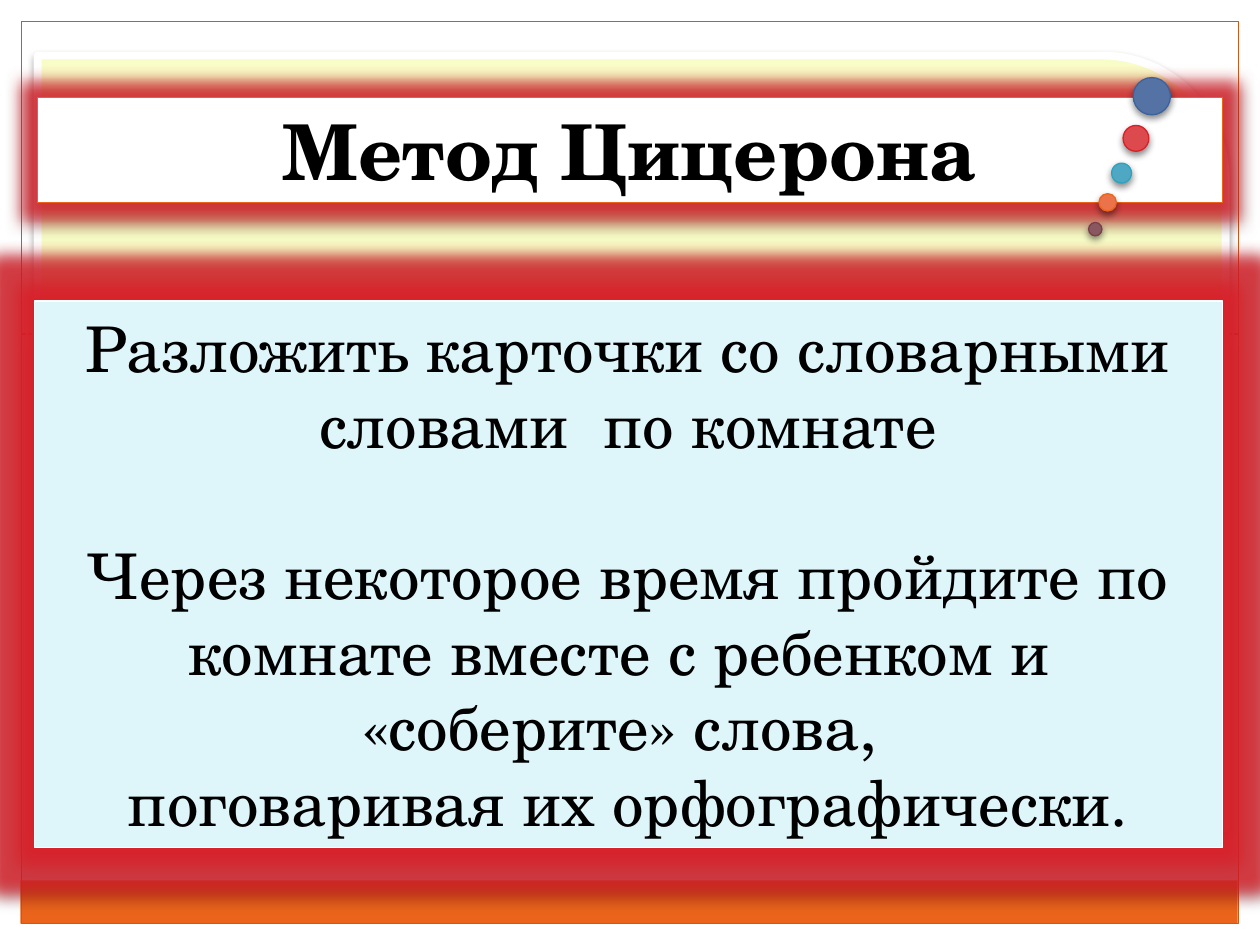
from pptx import Presentation
from pptx.dml.color import RGBColor
from pptx.enum.dml import MSO_LINE
from pptx.enum.shapes import MSO_CONNECTOR, MSO_SHAPE as Kind
from pptx.enum.text import MSO_ANCHOR, MSO_AUTO_SIZE, PP_ALIGN
from pptx.util import Cm, Pt
from lxml.etree import SubElement
from pptx.oxml.ns import qn

THEME = dict(font="TeX Gyre Schola", title=44, body=36, ink="000000",
             white="FFFFFF", sky="DEF5FA", lemon="F8FCC6", orange="EB641B",
             rust="CF5818", glow="DA1F28")

TITLE = "Метод Цицерона"
# text, space before in points
BODY = [
    ("Разложить карточки со словарными словами  по комнате", 0),
    ("Через некоторое время пройдите по комнате вместе с ребенком и ", 43),
    ("«соберите» слова, ", 0),
    ("поговаривая их орфографически.", 0),
]
# boxes are left, top, width, height in cm
EDGES = [
    ((0, 18.62, 25.4, 0.43), "white"),
    ((24.97, 0, 0.43, 19.05), "white"),
    ((0, 0, 0.43, 19.05), "white"),
    ((0, 0, 25.4, 6.98), "white"),
    ((0.41, 17.75, 24.54, 0.87), "orange"),
]
FRAME = (0.43, 0.43, 24.54, 18.19)
CARD = (0.76, 1.12, 23.95, 15.57)
TITLE_BOX = (0.76, 1.96, 23.88, 2.13)
BODY_BOX = (0.69, 6.07, 23.95, 11.02)
# centre x, centre y, diameter, fill, line
DOTS = [
    (23.22, 1.94, 0.75, "5572A4", "39639D"),
    (22.9, 2.79, 0.52, "DC4A4D", "DA1F28"),
    (22.61, 3.49, 0.4, "4FA8C3", "2DA2BF"),
    (22.33, 4.08, 0.35, "EC7349", "EB641B"),
    (22.08, 4.62, 0.27, "885760", "7D3C4A"),
]


def rgb(name):
    return RGBColor.from_string(THEME.get(name, name))


def place(shape, box):
    shape.left, shape.top, shape.width, shape.height = map(Cm, box)


def tint(node, color, alpha):
    clr = SubElement(node, qn("a:srgbClr"), val=str(rgb(color)))
    SubElement(clr, qn("a:alpha"), val=str(alpha * 1000))


def style(shape, fill=None, line=None, width=0.75, shade=None, glow=False):
    """Set fill, line and effects; shade is alpha, blur, distance, angle."""
    if fill:
        shape.fill.solid()
        shape.fill.fore_color.rgb = rgb(fill)
    else:
        shape.fill.background()
    if line:
        shape.line.color.rgb = rgb(line)
        shape.line.width = Pt(width)
    else:
        shape.line.fill.background()
    shape.shadow.inherit = False
    fx = shape.element.spPr.find(qn("a:effectLst"))
    if glow:
        tint(SubElement(fx, qn("a:glow"), rad=str(Pt(18))), "glow", 80)
    if shade:
        alpha, blur, dist, angle = shade
        node = SubElement(fx, qn("a:outerShdw"), blurRad=str(Pt(blur)),
                          dist=str(Pt(dist)), dir=str(angle * 60000),
                          rotWithShape="0")
        tint(node, "ink", alpha)


def add(slide, kind, box, **look):
    shape = slide.shapes.add_shape(kind, *map(Cm, box))
    style(shape, **look)
    return shape


def write(shape, rows, size, bold=False):
    frame = shape.text_frame
    frame.word_wrap = True
    frame.auto_size = MSO_AUTO_SIZE.NONE
    frame.vertical_anchor = MSO_ANCHOR.MIDDLE
    for i, (text, gap) in enumerate(rows):
        para = frame.add_paragraph() if i else frame.paragraphs[0]
        para.text = text
        para.alignment = PP_ALIGN.CENTER
        para.space_before = Pt(gap)
        font = para.font
        font.name, font.size, font.bold = THEME["font"], Pt(size), bold
        font.color.rgb = rgb("ink")


def main():
    prs = Presentation()
    prs.slide_width, prs.slide_height = Cm(25.4), Cm(19.05)
    slide = prs.slides.add_slide(prs.slide_layouts[5])
    slide.background.fill.solid()
    slide.background.fill.fore_color.rgb = rgb("sky")

    for box, fill in EDGES:
        add(slide, Kind.RECTANGLE, box, fill=fill)
    rule = slide.shapes.add_connector(
        MSO_CONNECTOR.STRAIGHT, Cm(0.43), Cm(6.73), Cm(24.97), Cm(6.73))
    rule.line.color.rgb = rgb("rust")
    rule.line.width = Pt(0.9)
    rule.line.dash_style = MSO_LINE.SQUARE_DOT
    SubElement(rule.element.spPr, qn("a:effectLst"))
    add(slide, Kind.RECTANGLE, FRAME, line="rust")

    card = add(slide, Kind.ROUND_1_RECTANGLE, CARD, fill="lemon",
               line="white", width=4.5, shade=(35, 4, 2, 90))
    card.adjustments[0] = 0.16

    title = slide.shapes.title
    title.element.getparent().append(title.element)  # above the card
    place(title, TITLE_BOX)
    style(title, "white", "orange", shade=(40, 4.1, 2, 90), glow=True)
    write(title, [(TITLE, 0)], THEME["title"], bold=True)

    for x, y, d, fill, line in DOTS:
        add(slide, Kind.FLOWCHART_CONNECTOR, (x - d / 2, y - d / 2, d, d),
            fill=fill, line=line, shade=(45, 4, 2, 90))

    body = add(slide, Kind.RECTANGLE, BODY_BOX, fill="sky", line="white",
               shade=(40, 4, 3, 45), glow=True)
    write(body, BODY, THEME["body"])
    prs.save("out.pptx")


if __name__ == "__main__":
    main()
